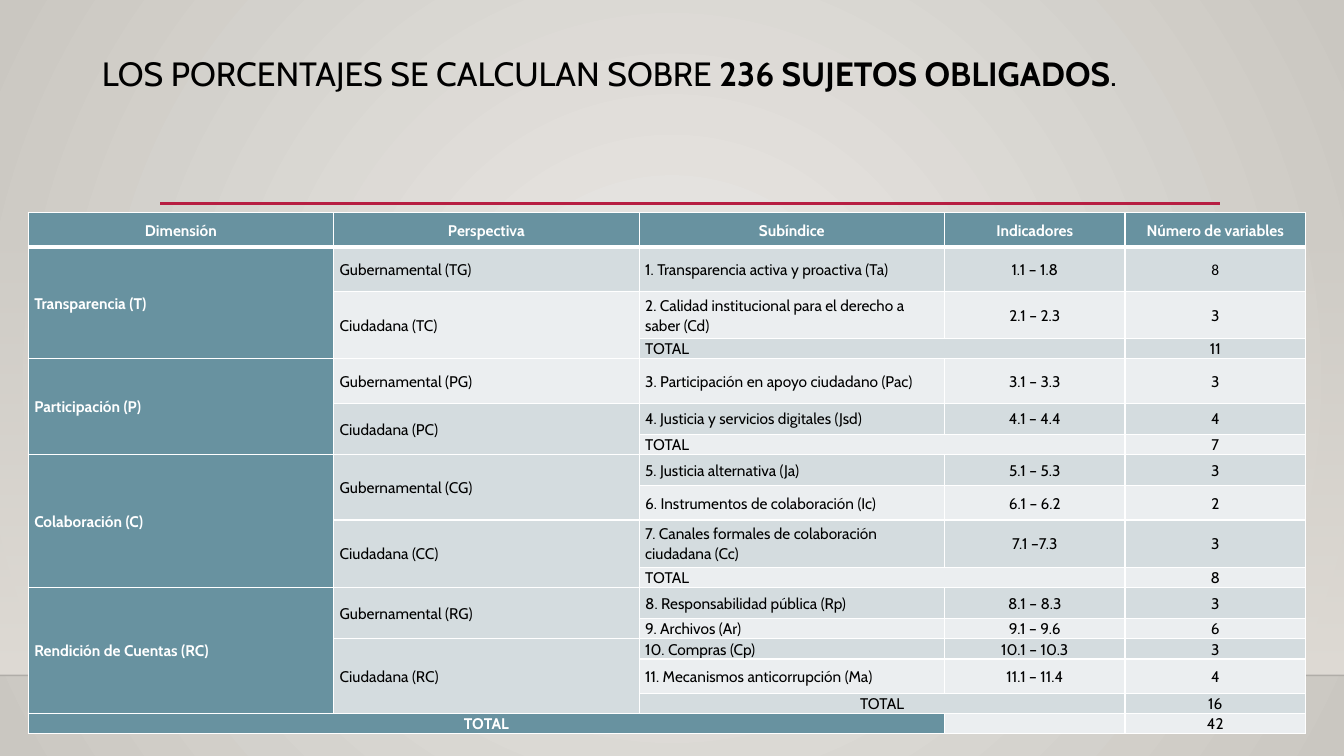
from dataclasses import dataclass

from lxml import etree
from pptx import Presentation
from pptx.dml.color import RGBColor
from pptx.enum.shapes import MSO_CONNECTOR, MSO_SHAPE
from pptx.enum.text import MSO_ANCHOR, PP_ALIGN
from pptx.oxml.ns import qn
from pptx.util import Emu, Inches, Pt

STRAIGHT = MSO_CONNECTOR.STRAIGHT
RECTANGLE = MSO_SHAPE.RECTANGLE
TOP, MIDDLE = MSO_ANCHOR.TOP, MSO_ANCHOR.MIDDLE
LEFT, CENTER, JUSTIFY = PP_ALIGN.LEFT, PP_ALIGN.CENTER, PP_ALIGN.JUSTIFY
FONT, DIGIT_FONT = "Cabin", "Calibri"
WHITE, BLACK, TEAL, RED = "FFFFFF", "000000", "6892A0", "B71E42"
BANDS = ("EBEEF0", "D4DCDF")
WIDTH, HEIGHT = Inches(13.33), Inches(7.5)
COLUMN_SHARES = (22.73, 22.73, 22.73, 13.43, 13.43)
HEADER, TALL, DOUBLE, MEDIUM, THIN = 4.53, 5.87, 6.27, 4.13, 2.13


@dataclass(frozen=True)
class Row:
    height: float
    dimension: str
    perspective: str
    subindex: str
    indicators: str
    variables: str

    def texts(self) -> tuple:
        return (self.dimension, self.perspective, self.subindex,
                self.indicators, self.variables)


@dataclass(frozen=True)
class Rule:
    left: float
    right: float
    top: float
    color: str
    points: float
    opacity: int


ROWS = (
    Row(HEADER, "Dimensión", "Perspectiva", "Subíndice", "Indicadores", "Número de variables"),
    Row(TALL, "Transparencia (T)", "Gubernamental (TG)",
        "1. Transparencia activa y proactiva (Ta)", "1.1 – 1.8", "8"),
    Row(DOUBLE, "", "Ciudadana (TC)",
        "2. Calidad institucional para el derecho a saber (Cd)", "2.1 – 2.3", "3"),
    Row(THIN, "", "", "TOTAL", "", "11"),
    Row(TALL, "Participación (P)", "Gubernamental (PG)",
        "3. Participación en apoyo ciudadano (Pac)", "3.1 – 3.3", "3"),
    Row(MEDIUM, "", "Ciudadana (PC)", "4. Justicia y servicios digitales (Jsd)", "4.1 – 4.4", "4"),
    Row(THIN, "", "", "TOTAL", "", "7"),
    Row(MEDIUM, "Colaboración (C)", "Gubernamental (CG)",
        "5. Justicia alternativa (Ja)", "5.1 – 5.3", "3"),
    Row(HEADER, "", "", "6. Instrumentos de colaboración (Ic)", "6.1 – 6.2", "2"),
    Row(DOUBLE, "", "Ciudadana (CC)",
        "7. Canales formales de colaboración ciudadana (Cc)", "7.1 –7.3", "3"),
    Row(THIN, "", "", "TOTAL", "", "8"),
    Row(MEDIUM, "Rendición de Cuentas (RC)", "Gubernamental (RG)",
        "8. Responsabilidad pública (Rp)", "8.1 – 8.3", "3"),
    Row(THIN, "", "", "9. Archivos (Ar)", "9.1 – 9.6", "6"),
    Row(THIN, "", "Ciudadana (RC)", "10. Compras (Cp)", "10.1 – 10.3", "3"),
    Row(HEADER, "", "", "11. Mecanismos anticorrupción (Ma)", "11.1 – 11.4", "4"),
    Row(THIN, "", "", "TOTAL", "", "16"),
    Row(THIN, "TOTAL", "", "", "", "42"),
)
LAST = len(ROWS) - 1
RULES = (
    Rule(0, 100, 89.33, BLACK, 1, 20),
    Rule(11.93, 90.77, 26.93, RED, 2.5, 100),
)
TITLE_PARTS = (
    ("LOS PORCENTAJES SE CALCULAN SOBRE ", False),
    ("236 SUJETOS OBLIGADOS", True),
    (".", False),
)


def across(share: float) -> Emu:
    return Emu(round(WIDTH * share / 100))


def down(share: float) -> Emu:
    return Emu(round(HEIGHT * share / 100))


def rgb(color: str) -> RGBColor:
    return RGBColor.from_string(color)


def set_opacity(color_element, percent: int) -> None:
    etree.SubElement(color_element, qn("a:alpha"), val=str(percent * 1000))


def format_run(run, size: float, color: str, bold: bool, font: str = FONT) -> None:
    run.font.name, run.font.size, run.font.bold = font, Pt(size), bold
    run.font.color.rgb = rgb(color)


def format_paragraph(paragraph, alignment) -> None:
    paragraph.alignment = alignment
    paragraph.line_spacing = 1.07
    paragraph.space_after = Pt(8)


def set_gradient(fill, colors: tuple) -> None:
    fill.gradient()
    for position, (stop, color) in enumerate(zip(fill.gradient_stops, colors)):
        stop.position = position
        stop.color.rgb = rgb(color)


def draw_background(slide) -> None:
    set_gradient(slide.background.fill, ("ECEAE7", "CAC7C1"))
    gradient = next(slide.element.iter(qn("a:gradFill")))
    gradient.remove(gradient.find(qn("a:lin")))
    circle = etree.SubElement(gradient, qn("a:path"))
    circle.set("path", "circle")
    etree.SubElement(circle, qn("a:fillToRect"), l="50000", t="50000", r="50000", b="50000")


def draw_wall(slide) -> None:
    wall = slide.shapes.add_shape(RECTANGLE, 0, down(29.47), WIDTH, down(59.87))
    wall.shadow.inherit = False
    wall.line.fill.background()
    set_gradient(wall.fill, ("DFDBD5", "DFDBD5"))
    wall.fill.gradient_angle = 270
    set_opacity(next(wall._element.iter(qn("a:srgbClr"))), 0)


def draw_rule(slide, rule: Rule) -> None:
    connector = slide.shapes.add_connector(
        STRAIGHT, across(rule.left), down(rule.top), across(rule.right), down(rule.top))
    connector.line.color.rgb = rgb(rule.color)
    connector.line.width = Pt(rule.points)
    set_opacity(next(connector._element.iter(qn("a:srgbClr"))), rule.opacity)
    etree.SubElement(connector._element.spPr, qn("a:effectLst"))


def write_title(slide) -> None:
    title = slide.shapes.title
    title.left, title.top = across(6.83), down(6)
    title.width, title.height = across(88.22), down(19.33)
    text_frame = title.text_frame
    text_frame.word_wrap = True
    text_frame.vertical_anchor = TOP
    paragraph = text_frame.paragraphs[0]
    format_paragraph(paragraph, JUSTIFY)
    for text, bold in TITLE_PARTS:
        run = paragraph.add_run()
        run.text = text
        format_run(run, 24, BLACK, bold)


def set_borders(cell, row_index: int) -> None:
    widths = {"L": 1, "R": 1, "T": 3 if row_index == 1 else 1, "B": 3 if row_index == 0 else 1}
    for side, points in widths.items():
        border = etree.SubElement(cell._tc.get_or_add_tcPr(), qn(f"a:ln{side}"), w=str(Pt(points)))
        solid = etree.SubElement(border, qn("a:solidFill"))
        etree.SubElement(solid, qn("a:srgbClr"), val=WHITE)


def fill_cell(cell, text: str, row_index: int, column: int) -> None:
    strong = row_index == 0 or column == 0 or (row_index == LAST and column < 3)
    set_borders(cell, row_index)
    cell.fill.solid()
    cell.fill.fore_color.rgb = rgb(TEAL if strong else BANDS[row_index % 2])
    cell.vertical_anchor = MIDDLE
    cell.margin_left = cell.margin_right = Inches(0.06)
    cell.margin_top = cell.margin_bottom = 0
    cell.text_frame.text = text
    paragraph = cell.text_frame.paragraphs[0]
    centered = row_index in (0, LAST - 1, LAST) or column > 2
    format_paragraph(paragraph, CENTER if centered else LEFT)
    for run in paragraph.runs:
        font = DIGIT_FONT if (row_index, column) == (1, 4) else FONT
        format_run(run, 11, WHITE if strong else BLACK, strong, font)
    if not text:
        etree.SubElement(paragraph._p, qn("a:endParaRPr"), sz="1100")


def merge_cells(table) -> None:
    for column, field in enumerate(("dimension", "perspective")):
        starts = [index for index, row in enumerate(ROWS) if getattr(row, field)]
        starts = [index for index in starts if index < LAST] + [LAST]
        for start, following in zip(starts, starts[1:]):
            if following - start > 1:
                table.cell(start, column).merge(table.cell(following - 1, column))
    for index, row in enumerate(ROWS):
        if row.subindex == "TOTAL":
            table.cell(index, 2).merge(table.cell(index, 3))
    table.cell(LAST, 0).merge(table.cell(LAST, 2))


def draw_table(slide) -> None:
    table = slide.shapes.add_table(
        len(ROWS), len(COLUMN_SHARES), across(2.1), down(28.13),
        across(sum(COLUMN_SHARES)), down(sum(row.height for row in ROWS))).table
    for column, share in zip(table.columns, COLUMN_SHARES):
        column.width = across(share)
    for row_index, row in enumerate(ROWS):
        table.rows[row_index].height = down(row.height)
        for column, text in enumerate(row.texts()):
            fill_cell(table.cell(row_index, column), text, row_index, column)
    merge_cells(table)


def main() -> None:
    presentation = Presentation()
    presentation.slide_width, presentation.slide_height = WIDTH, HEIGHT
    slide = presentation.slides.add_slide(presentation.slide_layouts[5])
    draw_background(slide)
    draw_wall(slide)
    for rule in RULES:
        draw_rule(slide, rule)
    write_title(slide)
    draw_table(slide)
    presentation.save("out.pptx")


if __name__ == "__main__":
    main()
